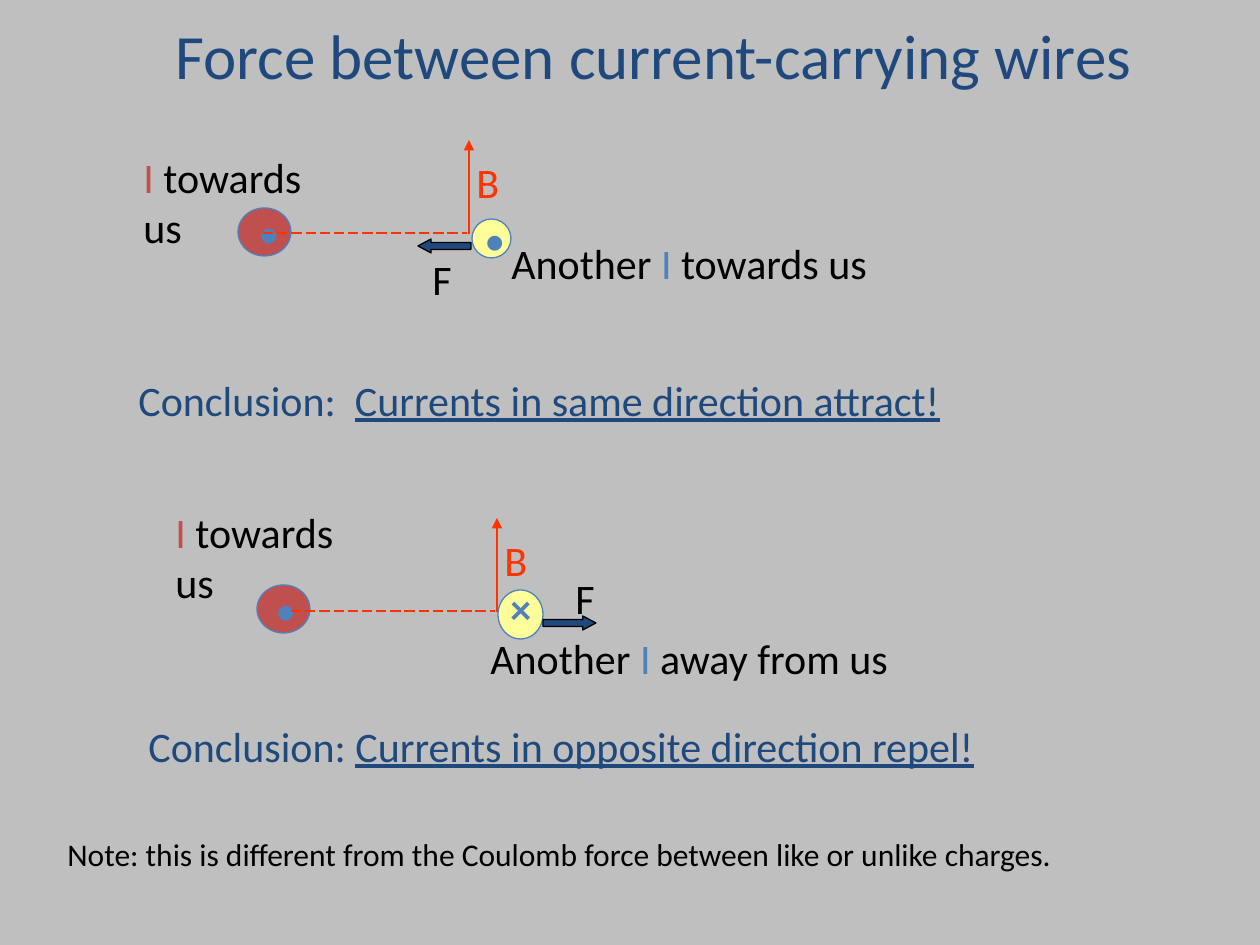
from lxml.etree import SubElement
from pptx import Presentation
from pptx.dml.color import RGBColor
from pptx.enum.dml import MSO_LINE
from pptx.enum.shapes import MSO_CONNECTOR, MSO_SHAPE
from pptx.enum.text import MSO_ANCHOR, MSO_AUTO_SIZE, PP_ALIGN
from pptx.oxml.ns import qn
from pptx.util import Pt

GREY = RGBColor(0xBF, 0xBF, 0xBF)
NAVY = RGBColor(0x1F, 0x49, 0x7D)
BLUE = RGBColor(0x4F, 0x81, 0xBD)
RED = RGBColor(0xC0, 0x50, 0x4D)
ORANGE = RGBColor(0xFF, 0x33, 0x00)
YELLOW = RGBColor(0xFF, 0xFF, 0x99)
BLACK = RGBColor(0, 0, 0)

EMU_PER_PX = 914400 / 126


def px(*lengths):
    return [round(length * EMU_PER_PX) for length in lengths]


class WireSlide:
    font_name = "Calibri"
    text_size = 24
    line_width = Pt(0.75)

    def __init__(self, deck):
        self.slide = deck.slides.add_slide(deck.slide_layouts[5])
        self.shapes = self.slide.shapes
        self.slide.background.fill.solid()
        self.slide.background.fill.fore_color.rgb = GREY

    def add_runs(self, frame, runs, size):
        """Runs are (text, colour) or (text, colour, underline)."""
        paragraph = frame.paragraphs[0]
        paragraph.font.name = self.font_name
        paragraph.font.size = Pt(size)
        for words, colour, *underline in runs:
            run = paragraph.add_run()
            run.text = words
            run.font.color.rgb = colour
            if underline:
                run.font.underline = underline[0]
        return paragraph

    def title(self, box, words):
        heading = self.shapes.title
        heading.left, heading.top, heading.width, heading.height = px(*box)
        frame = heading.text_frame
        frame.auto_size = MSO_AUTO_SIZE.NONE
        frame.vertical_anchor = MSO_ANCHOR.MIDDLE
        self.add_runs(frame, [(words, NAVY)], 36).alignment = PP_ALIGN.CENTER

    def text(self, box, *runs, size=text_size):
        frame = self.shapes.add_textbox(*px(*box)).text_frame
        frame.word_wrap = True
        frame.auto_size = MSO_AUTO_SIZE.SHAPE_TO_FIT_TEXT
        return self.add_runs(frame, runs, size)

    def shape(self, kind, box, fill, outline):
        shape = self.shapes.add_shape(kind, *px(*box))
        shape.shadow.inherit = False
        shape.fill.solid()
        shape.fill.fore_color.rgb = fill
        shape.line.color.rgb = outline
        shape.line.width = self.line_width
        return shape

    def line(self, start, end, dashed=False, arrow=False):
        connector = self.shapes.add_connector(
            MSO_CONNECTOR.STRAIGHT, *px(*start, *end))
        connector.line.color.rgb = ORANGE
        connector.line.width = self.line_width
        if dashed:
            connector.line.dash_style = MSO_LINE.LONG_DASH
        if arrow:
            SubElement(connector.get_or_add_ln(), qn("a:tailEnd"), type="triangle")
        SubElement(connector.element.spPr, qn("a:effectLst"))

    def wire(self, circle, fill, symbol, symbol_box):
        self.shape(MSO_SHAPE.OVAL, circle, fill, BLUE)
        self.text(symbol_box, (symbol, BLUE)).font.bold = symbol == "×"

    def field(self, x, y):
        """Field arrow rising from (x, y), with the dashed line from the first wire."""
        self.line((x - 206, y - 1), (x - 2, y - 1), dashed=True)
        self.line((x, y), (x, y - 94), arrow=True)
        self.text((x - 5, y - 84, 72, 63), ("B", ORANGE))

    def force(self, kind, x, y, label_x, label_y):
        arrow = self.shape(kind, (x, y, 53, 14), NAVY, BLACK)
        arrow.adjustments[1] = 0.94
        self.text((label_x, label_y, 49, 63), ("F", BLACK))


def main():
    deck = Presentation()
    deck.slide_width, deck.slide_height = px(1260, 945)
    page = WireSlide(deck)
    page.title((53, 10, 1201, 88), "Force between current-carrying wires")
    towards_us = [("I", RED), (" towards us", BLACK)]

    # Currents in the same direction
    page.wire((238, 208, 53, 48), RED, "•", (246, 200, 48, 63))
    page.text((131, 145, 229, 113), *towards_us)
    page.field(469, 234)
    page.wire((472, 219, 39, 39), YELLOW, "•", (472, 207, 62, 63))
    page.text((499, 231, 451, 63),
              ("Another ", BLACK), ("I", BLUE), (" towards us", BLACK))
    page.force(MSO_SHAPE.LEFT_ARROW, 418, 239, 420, 247)
    page.text((126, 368, 1013, 63), ("Conclusion:  ", NAVY),
              ("Currents in same direction attract!", NAVY, True))

    # Currents in opposite directions
    page.wire((257, 585, 53, 48), RED, "•", (263, 577, 48, 63))
    page.text((163, 500, 229, 113), *towards_us)
    page.field(497, 612)
    page.wire((498, 590, 45, 49), YELLOW, "×", (498, 576, 72, 63))
    page.text((478, 626, 527, 63),
              ("Another ", BLACK), ("I", BLUE), (" away from us", BLACK))
    page.force(MSO_SHAPE.RIGHT_ARROW, 543, 616, 563, 566)
    page.text((136, 714, 1036, 63), ("Conclusion: ", NAVY),
              ("Currents in opposite direction repel!", NAVY, True))

    # Closing note
    page.text((55, 829, 1142, 54),
              ("Note: this is different from the Coulomb force "
               "between like or unlike charges.", BLACK), size=18)

    deck.save("out.pptx")


if __name__ == "__main__":
    main()
